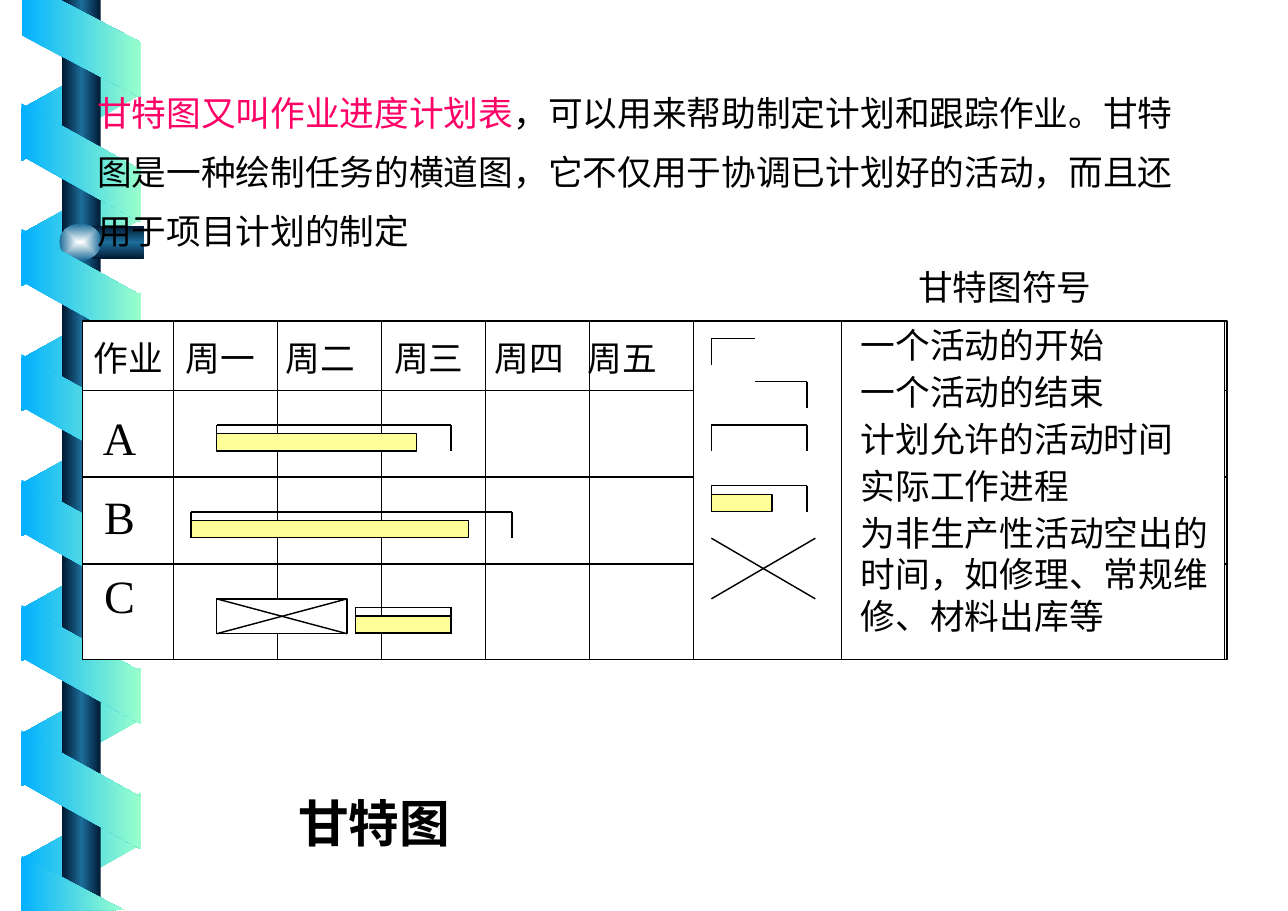
"""Build the Gantt chart slide with its ribbon border, week grid and symbol key."""
from pptx import Presentation
from pptx.dml.color import RGBColor
from pptx.enum.shapes import MSO_CONNECTOR, MSO_SHAPE
from pptx.enum.text import MSO_ANCHOR, PP_ALIGN
from pptx.oxml import parse_xml
from pptx.oxml.ns import nsdecls, qn
from pptx.util import Cm, Pt

SERIF, SANS = "Times New Roman", "Noto Sans CJK JP"
BLACK, WHITE, PINK, YELLOW = "000000", "FFFFFF", "FF0066", "FFFF99"
FRONT = ["01B0FF", "99FFCC"]
BACK = FRONT[::-1]
STEEL = ["001932", "1C6D9A", "001932"]
GLOW = ["FEFFFF", "1C6D9A"]
FLAT = '<a:lin ang="0" scaled="0"/>'
DOWN = '<a:lin ang="5400000" scaled="0"/>'
ROUND = '<a:path path="shape"><a:fillToRect l="50000" t="50000" r="50000" b="50000"/></a:path>'


def paint(shape, fill, way=FLAT):
    """Fill a shape with one colour and a black line, or with a gradient."""
    shape.shadow.inherit = False
    if isinstance(fill, str):
        shape.fill.solid()
        shape.fill.fore_color.rgb = RGBColor.from_string(fill)
        shape.line.color.rgb = RGBColor.from_string(BLACK)
        shape.line.width = Pt(1)
        return
    shape.line.fill.background()
    last = len(fill) - 1
    stops = "".join(f'<a:gs pos="{100000 * i // last}"><a:srgbClr val="{hue}"/></a:gs>'
                    for i, hue in enumerate(fill))
    grad = parse_xml(f'<a:gradFill {nsdecls("a")} rotWithShape="0">'
                     f'<a:gsLst>{stops}</a:gsLst>{way}</a:gradFill>')
    shape.fill.background()
    props = shape._element.spPr
    props.replace(props.find(qn("a:noFill")), grad)


def rule(x1, y1, x2, y2):
    """Draw a thin black line between two points."""
    line = shapes.add_connector(MSO_CONNECTOR.STRAIGHT, Cm(x1), Cm(y1), Cm(x2), Cm(y2))
    line.line.color.rgb = RGBColor.from_string(BLACK)
    line.line.width = Pt(1)
    line._element.spPr.append(parse_xml(f'<a:effectLst {nsdecls("a")}/>'))


deck = Presentation()
deck.slide_width, deck.slide_height = Pt(891), Pt(630)
slide = deck.slides.add_slide(deck.slide_layouts[5])
shapes = slide.shapes

# Ribbon border
for i in range(7):
    fold = shapes.add_shape(MSO_SHAPE.PARALLELOGRAM, Cm(0.53), Cm(1.02 + 3.05 * i), Cm(2.9), Cm(2.92))
    fold.adjustments[0] = 0.56
    fold.rotation = 90
    fold._element.spPr.xfrm.set("flipH", "1")
    paint(fold, BACK)

rod = shapes.add_shape(MSO_SHAPE.RECTANGLE, Cm(1.52), 0, Cm(0.94), Cm(22.22))
paint(rod, STEEL)
peg = shapes.add_shape(MSO_SHAPE.PENTAGON, Cm(1.88), Cm(5.51), Cm(1.63), Cm(0.81))
peg._element.spPr.xfrm.set("flipH", "1")
paint(peg, STEEL, DOWN)
knob = shapes.add_shape(MSO_SHAPE.OVAL, Cm(1.45), Cm(5.46), Cm(1.02), Cm(0.89))
paint(knob, GLOW, ROUND)

for i in range(6):
    fold = shapes.add_shape(MSO_SHAPE.PARALLELOGRAM, Cm(0.53), Cm(2.51 + 3.06 * i), Cm(2.9), Cm(2.92))
    fold.adjustments[0] = 0.56
    fold.rotation = 270
    paint(fold, FRONT)

tips = [
    [(0.53, 0), (0.53, 0.86), (3.45, 2.39), (3.45, 1.04), (1.47, 0)],
    [(3.02, 22.2), (0.53, 20.88), (0.51, 22.22)],
]
for points in tips:
    first, *rest = [(Cm(x), Cm(y)) for x, y in points]
    pen = shapes.build_freeform(*first)
    pen.add_line_segments(rest)
    paint(pen.convert_to_shape(), FRONT)

# Week grid and symbol key
paint(shapes.add_shape(MSO_SHAPE.RECTANGLE, Cm(2.01), Cm(7.83), Cm(27.94), Cm(8.26)), WHITE)
for y in [9.53, 11.64, 13.76]:
    rule(2.01, y, 29.95, y)
for i in range(6):
    x = 4.23 + 2.54 * i
    rule(x, 7.83, x, 16.09)
paint(shapes.add_shape(MSO_SHAPE.RECTANGLE, Cm(16.93), Cm(7.83), Cm(12.95), Cm(8.26)), WHITE)
rule(20.53, 7.83, 20.53, 16.09)

# Brackets with progress bars: left, right, top, bar length, legs
plans = [
    (5.29, 11.01, 10.37, 4.87, "LR"),
    (4.66, 12.49, 12.49, 6.77, "LR"),
    (8.68, 11.01, 14.82, 2.33, "LR"),
    (17.36, 18.42, 8.26, 0, "L"),
    (18.42, 19.69, 9.31, 0, "R"),
    (17.36, 19.69, 10.37, 0, "LR"),
    (17.36, 19.69, 11.85, 1.48, "LR"),
]
for left, right, top, bar, legs in plans:
    if bar:
        paint(shapes.add_shape(MSO_SHAPE.RECTANGLE, Cm(left), Cm(top + 0.21), Cm(bar), Cm(0.42)), YELLOW)
    rule(left, top, right, top)
    for x, leg in [(left, "L"), (right, "R")]:
        if leg in legs:
            rule(x, top, x, top + 0.64)

paint(shapes.add_shape(MSO_SHAPE.RECTANGLE, Cm(5.29), Cm(14.61), Cm(3.18), Cm(0.85)), WHITE)
for left, top, right, low in [(5.29, 14.61, 8.47, 15.46), (17.36, 13.13, 19.9, 14.61)]:
    rule(left, top, right, low)
    rule(left, low, right, top)

# Title
title = shapes.title
title.left, title.top, title.width, title.height = Cm(6.98), Cm(18.85), Cm(19.25), Cm(2.11)
frame = title.text_frame
frame.vertical_anchor = MSO_ANCHOR.BOTTOM
frame.margin_left = frame.margin_right = Cm(0.3)
frame.margin_top = frame.margin_bottom = Cm(0.15)
para = frame.paragraphs[0]
para.alignment = PP_ALIGN.LEFT
run = para.add_run()
run.text = "甘特图"
run.font.size, run.font.bold, run.font.name = Pt(35), True, SANS
run.font.color.rgb = RGBColor.from_string(BLACK)

# Texts: box, wrap, alignment, size, gap, paragraphs
intro = [
    [("甘特图又叫作业进度计划表", PINK), ("，可以用来帮助制定计划和跟踪作业。甘特", BLACK)],
    [("图是一种绘制任务的横道图，它不仅用于协调已计划好的活动，而且还", BLACK)],
    [("用于项目计划的制定", BLACK)],
]
days = "作业\t周一\t周二\t周三\t周四\t周五"
keys = ["一个活动的开始", "一个活动的结束", "计划允许的活动时间", "实际工作进程",
        "为非生产性活动空出的时间，如修理、常规维修、材料出库等"]
texts = [
    ((2.12, 2.12, 27.3, 4.32), True, PP_ALIGN.LEFT, 24, 12, intro),
    ((2.03, 8.1, 14.68, 1.27), False, PP_ALIGN.LEFT, 24, 0, [[(days, BLACK)]]),
    ((2.26, 9.86, 1.32, 5.66), False, PP_ALIGN.CENTER, 32, 16.2, [[(name, BLACK)] for name in "ABC"]),
    ((22.15, 6.35, 4.75, 1.27), False, PP_ALIGN.CENTER, 24, 0, [[("甘特图符号", BLACK)]]),
    ((20.76, 7.78, 9.53, 7.98), True, PP_ALIGN.LEFT, 24, 3.6, [[(key, BLACK)] for key in keys]),
]
for box, wrap, side, size, gap, lines in texts:
    frame = shapes.add_textbox(*[Cm(n) for n in box]).text_frame
    frame.word_wrap = wrap
    for i, line in enumerate(lines):
        para = frame.add_paragraph() if i else frame.paragraphs[0]
        para.alignment = side
        para.line_spacing = Pt(1.2 * size)
        para.space_before = Pt(gap if i else 0)
        if line[0][0] == days:
            stops = "".join(f'<a:tab pos="{Cm(n)}" algn="l"/>' for n in [2.26, 4.7, 7.34, 9.8, 12.06])
            para._p.get_or_add_pPr().append(parse_xml(f'<a:tabLst {nsdecls("a")}>{stops}</a:tabLst>'))
        for text, hue in line:
            run = para.add_run()
            run.text = text
            run.font.size, run.font.name = Pt(size), SERIF
            run.font.color.rgb = RGBColor.from_string(hue)

deck.save("out.pptx")
